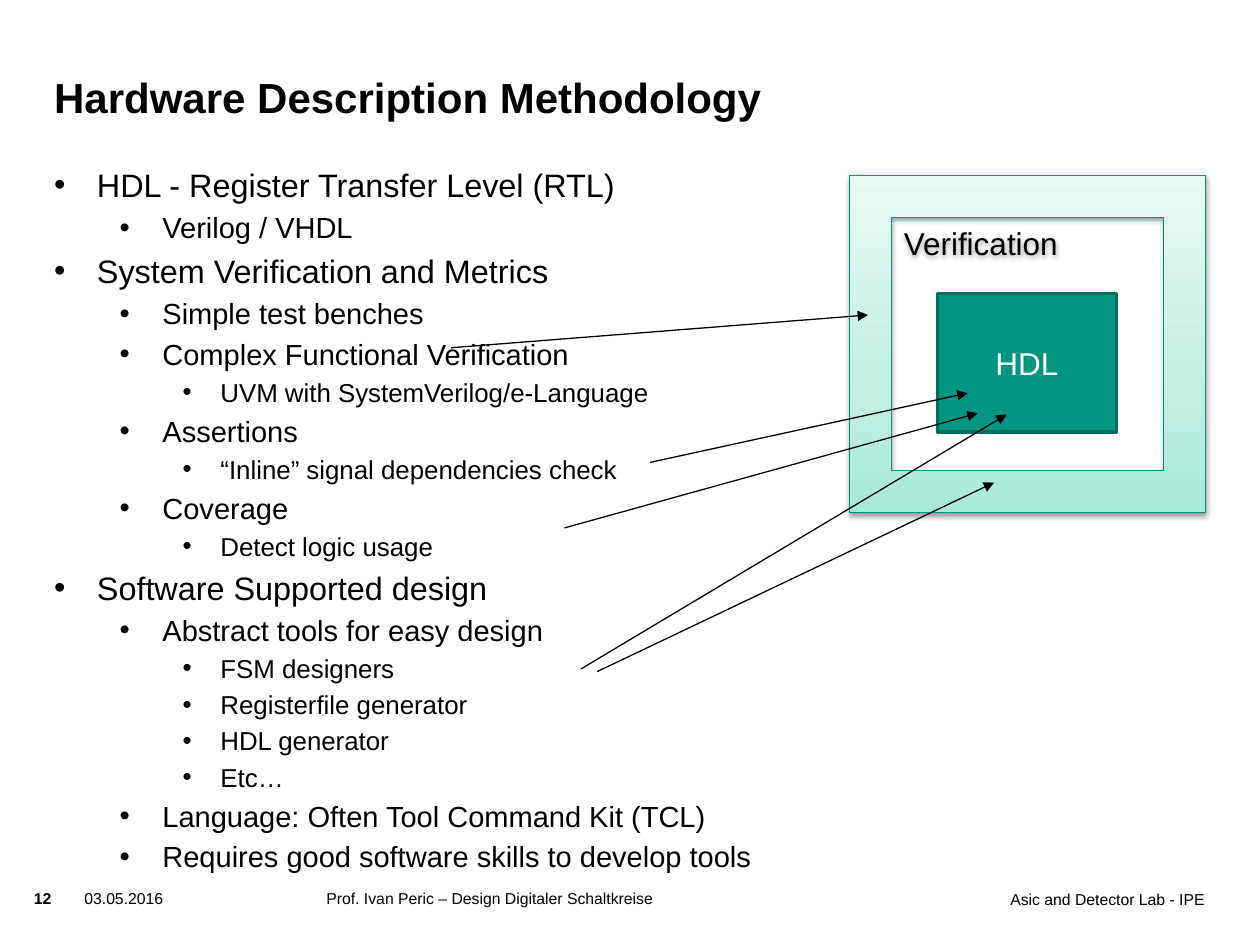
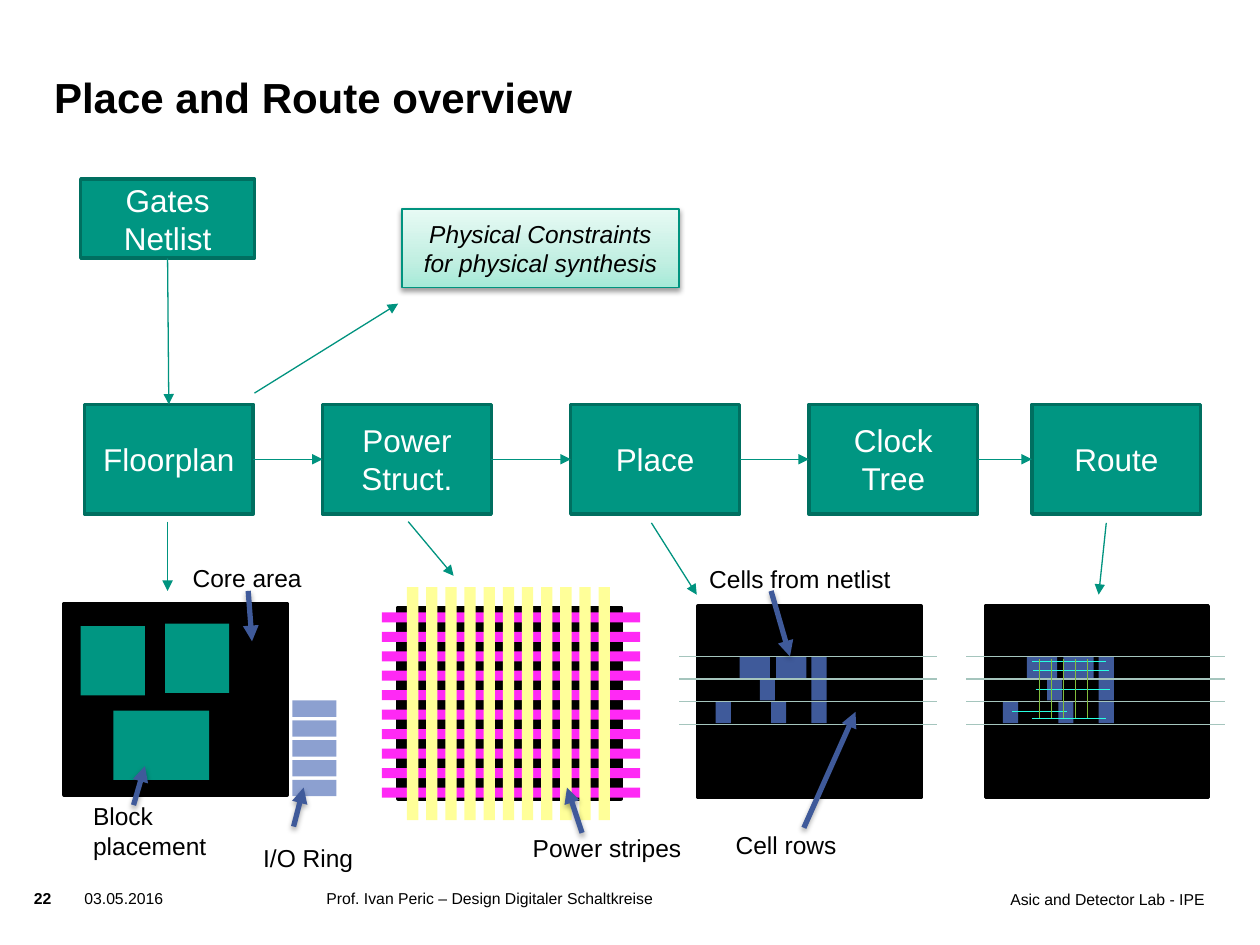
from copy import deepcopy
from dataclasses import dataclass

from pptx import Presentation
from pptx.dml.color import RGBColor
from pptx.enum.shapes import MSO_CONNECTOR, MSO_SHAPE
from pptx.enum.text import MSO_ANCHOR, PP_ALIGN
from pptx.oxml import parse_xml
from pptx.oxml.ns import nsdecls, qn
from pptx.oxml.xmlchemy import OxmlElement
from pptx.util import Inches, Pt


@dataclass(frozen=True)
class Theme:
    font: str = "Arial"
    black: str = "000000"
    white: str = "FFFFFF"
    green: str = "009682"
    green_border: str = "006F60"
    green_line: str = "00937F"
    gradient: tuple = ((0, "A6EAD8"), (0.35, "C2EFE2"), (1, "E7FAF4"))
    blue: str = "3F5A9A"
    pad: str = "8CA0D0"
    power_row: str = "FF29F5"
    power_stripe: str = "FFFF99"
    cell_row: str = "A5C5BD"
    wire_across: str = "27FFE2"
    wire_down: str = "82BE3C"
    title_size: float = 24
    box_size: float = 18
    label_size: float = 14
    footer_size: float = 9
    thin: float = 0.75
    border: float = 2
    pointer: float = 3
    # size, left margin and indent of each bullet level
    bullets: tuple = ((18.5, 0.34, -0.34), (16.6, 0.86, -0.34), (14.8, 1.32, -0.3))


THEME = Theme()


@dataclass(frozen=True)
class Box:
    """A rectangle in inches."""
    left: float
    top: float
    width: float
    height: float

    def inner(self, left, top, width, height):
        return Box(self.left + left, self.top + top, width, height)

    def point(self, across, down):
        return self.left + across, self.top + down

    def lengths(self):
        return [Inches(value) for value in (self.left, self.top, self.width, self.height)]


def rgb(color):
    return RGBColor.from_string(color)


def write(paragraph, text, size, color=THEME.black, bold=False, italic=False):
    run = paragraph.add_run()
    run.text = text
    font = run.font
    font.name, font.size, font.bold, font.italic = THEME.font, Pt(size), bold, italic
    font.color.rgb = rgb(color)


def add_text_box(slide, box, inset=True):
    frame = slide.shapes.add_textbox(*box.lengths()).text_frame
    frame.word_wrap = True
    if not inset:
        frame.margin_left = frame.margin_top = frame.margin_right = frame.margin_bottom = 0
    return frame


def add_rectangle(slide, box, color, border=None):
    shape = slide.shapes.add_shape(MSO_SHAPE.RECTANGLE, *box.lengths())
    shape.shadow.inherit = False
    shape.fill.solid()
    shape.fill.fore_color.rgb = rgb(color)
    if border:
        shape.line.color.rgb = rgb(border)
        shape.line.width = Pt(THEME.border)
    else:
        shape.line.fill.background()
    return shape


def add_green_box(slide, box, text):
    shape = add_rectangle(slide, box, THEME.green, THEME.green_border)
    paragraph = shape.text_frame.paragraphs[0]
    paragraph.alignment = PP_ALIGN.CENTER
    write(paragraph, text, THEME.box_size, THEME.white)
    return shape


def add_drop_shadow(effects, distance, opacity):
    effects.append(parse_xml(
        f'<a:outerShdw {nsdecls("a")} blurRad="{Pt(3.1)}" dist="{Pt(distance)}" '
        f'dir="5400000" rotWithShape="0"><a:srgbClr val="{THEME.black}">'
        f'<a:alpha val="{opacity * 1000}"/></a:srgbClr></a:outerShdw>'))


def add_gradient_shape(slide, kind, box):
    shape = slide.shapes.add_shape(kind, *box.lengths())
    shape.fill.gradient()
    shape.fill.gradient_angle = 90
    properties = shape._element.spPr
    stops = properties.find(".//" + qn("a:gsLst"))
    stops.append(deepcopy(stops[-1]))
    for stop, (position, color) in zip(shape.fill.gradient_stops, THEME.gradient):
        stop.position = position
        stop.color.rgb = rgb(color)
    shape.line.color.rgb = rgb(THEME.green_line)
    shape.line.width = Pt(THEME.thin)
    shape.shadow.inherit = False
    add_drop_shadow(properties.find(qn("a:effectLst")), 1.6, 38)
    return shape


def add_line(slide, start, end, color, width=THEME.thin, arrow=False, shadow=False):
    points = [Inches(value) for value in (*start, *end)]
    connector = slide.shapes.add_connector(MSO_CONNECTOR.STRAIGHT, *points)
    connector.line.color.rgb = rgb(color)
    connector.line.width = Pt(width)
    properties = connector._element.spPr
    if arrow:
        tail = OxmlElement("a:tailEnd")
        tail.set("type", "triangle")
        properties.find(qn("a:ln")).append(tail)
    effects = OxmlElement("a:effectLst")
    properties.append(effects)
    if shadow:
        add_drop_shadow(effects, 1.8, 35)
    return connector


def add_flow_arrow(slide, start, end):
    return add_line(slide, start, end, THEME.green_line, arrow=True)


def join(slide, source, source_side, target, target_side):
    arrow = add_flow_arrow(slide, (0, 0), (1, 1))
    arrow.begin_connect(source, source_side)
    arrow.end_connect(target, target_side)


def add_callout(slide, text, label_box, start, end):
    """A label with a thick pointer to the thing it names."""
    write(add_text_box(slide, label_box).paragraphs[0], text, THEME.label_size)
    add_line(slide, start, end, THEME.blue, THEME.pointer, arrow=True, shadow=True)


def add_base_slide(presentation, title, number):
    """A blank slide with the shared title and footer."""
    slide = presentation.slides.add_slide(presentation.slide_layouts[6])
    left, right = PP_ALIGN.LEFT, PP_ALIGN.RIGHT
    for box, text, alignment, bold in (
        (Box(6.57, 7.06, 2.99, 0.39), "Asic and Detector Lab - IPE", right, False),
        (Box(0.27, 7.05, 0.36, 0.24), number, left, True),
        (Box(0.67, 7.05, 0.94, 0.39), "03.05.2016", left, False),
        (Box(2.59, 7.05, 2.99, 0.39), "Prof. Ivan Peric – Design Digitaler Schaltkreise", left, False),
    ):
        paragraph = add_text_box(slide, box, inset=False).paragraphs[0]
        paragraph.alignment = alignment
        write(paragraph, text, THEME.footer_size, bold=bold)
    frame = add_text_box(slide, Box(0.43, 0.36, 7.56, 0.61), inset=False)
    frame.vertical_anchor = MSO_ANCHOR.BOTTOM
    write(frame.paragraphs[0], title, THEME.title_size, bold=True)
    return slide


def add_bullets(slide, box, items):
    frame = add_text_box(slide, box, inset=False)
    for index, (level, text) in enumerate(items):
        paragraph = frame.add_paragraph() if index else frame.paragraphs[0]
        size, margin, indent = THEME.bullets[level]
        paragraph.level = level
        if index:
            paragraph.space_before = Pt(size / 5)
        properties = paragraph._p.get_or_add_pPr()
        properties.set("marL", str(Inches(margin)))
        properties.set("indent", str(Inches(indent)))
        for tag, name, value in (("a:buFont", "typeface", THEME.font), ("a:buChar", "char", "•")):
            bullet = OxmlElement(tag)
            bullet.set(name, value)
            properties.append(bullet)
        write(paragraph, text, size)


def add_verification_diagram(slide, box):
    add_green_box(slide, box.inner(0.7, 0.94, 1.42, 1.1), "HDL")
    frame = add_gradient_shape(slide, MSO_SHAPE.FRAME, box).text_frame
    frame.vertical_anchor = MSO_ANCHOR.TOP
    frame.paragraphs[0].alignment = PP_ALIGN.LEFT
    write(frame.paragraphs[0], "Verification", THEME.box_size)
    for start, end in (
        ((-1.58, 2.28), (0.94, 1.73)),
        ((-2.26, 2.8), (1.02, 1.89)),
        ((-3.16, 1.37), (0.15, 1.11)),
        ((-2.13, 3.92), (1.25, 1.9)),
        ((-2, 3.94), (1.15, 2.44)),
    ):
        add_line(slide, box.point(*start), box.point(*end), THEME.black, arrow=True)


def add_design_flow(slide, box):
    netlist = add_green_box(slide, box.inner(0, 0, 1.38, 0.63), "Gates Netlist")
    stages = [
        add_green_box(slide, box.inner(left, 1.79, 1.34, 0.87), text)
        for left, text in ((0.03, "Floorplan"), (1.92, "Power Struct."), (3.89, "Place"),
                           (5.78, "Clock Tree"), (7.55, "Route"))
    ]
    constraints = add_gradient_shape(slide, MSO_SHAPE.RECTANGLE, box.inner(2.55, 0.24, 2.2, 0.62))
    paragraph = constraints.text_frame.paragraphs[0]
    paragraph.alignment = PP_ALIGN.CENTER
    write(paragraph, "Physical Constraints for physical synthesis", THEME.label_size, italic=True)
    join(slide, netlist, 2, stages[0], 0)
    for stage, following in zip(stages, stages[1:]):
        join(slide, stage, 3, following, 1)
    add_flow_arrow(slide, box.point(1.38, 1.7), box.point(2.52, 0.99))


def add_die(slide, box, arrow_start, arrow_end):
    """The black chip area and the arrow that leads to it."""
    add_rectangle(slide, box, THEME.black, THEME.black)
    add_flow_arrow(slide, box.point(*arrow_start), box.point(*arrow_end))


def add_floorplan(slide, box):
    add_die(slide, box, (0.82, -0.65), (0.82, -0.1))
    for left, top, width in ((0.13, 0.18, 0.51), (0.8, 0.16, 0.51), (0.39, 0.85, 0.76)):
        add_rectangle(slide, box.inner(left, top, width, 0.55), THEME.green)
    for index in range(5):
        add_rectangle(slide, box.inner(1.81, 0.77 + index * 0.63 / 4, 0.35, 0.13), THEME.pad)
    for text, label, start, end in (
        ("Block placement", (0.13, 1.52, 1.18, 0.57), (0.55, 1.6), (0.64, 1.29)),
        ("I/O Ring", (1.48, 1.85, 1.18, 0.34), (1.82, 1.77), (1.9, 1.46)),
        ("Core area", (0.92, -0.37, 1.18, 0.34), (1.46, -0.1), (1.49, 0.3)),
    ):
        add_callout(slide, text, box.inner(*label), box.point(*start), box.point(*end))


def add_power_grid(slide, box):
    add_die(slide, box, (0.08, -0.68), (0.44, -0.25))
    for index in range(10):
        row = box.inner(-0.13, 0.04 + index * 1.39 / 9, 2.05, 0.08)
        add_rectangle(slide, row, THEME.power_row)
    for index in range(11):
        stripe = box.inner(0.07 + index * 1.52 / 10, -0.16, 0.09, 1.85)
        add_rectangle(slide, stripe, THEME.power_stripe)
    add_callout(slide, "Power stripes", box.inner(0.97, 1.74, 1.64, 0.34),
                box.point(1.46, 1.79), box.point(1.34, 1.43))


def add_cell_rows(slide, box):
    """Three rows of cells between four row lines."""
    first, pitch = 0.4, 0.18
    rows = (((0.33, 0.24), (0.62, 0.24), (0.9, 0.12)),
            ((0.49, 0.12), (0.9, 0.12)),
            ((0.14, 0.12), (0.58, 0.12), (0.9, 0.12)))
    for index, cells in enumerate(rows):
        for left, width in cells:
            add_rectangle(slide, box.inner(left, first + index * pitch, width, 0.17), THEME.blue)
    for index in range(len(rows) + 1):
        height = first + index * pitch
        add_line(slide, box.point(-0.15, height), box.point(1.9, height), THEME.cell_row)


def add_placement(slide, box):
    add_die(slide, box, (-0.37, -0.66), (-0.01, -0.09))
    add_cell_rows(slide, box)
    add_callout(slide, "Cell rows", box.inner(0.2, 1.73, 1.64, 0.34),
                box.point(0.84, 1.76), box.point(1.25, 0.84))
    add_callout(slide, "Cells from netlist", box.inner(-0.01, -0.38, 1.82, 0.34),
                box.point(0.58, -0.12), box.point(0.73, 0.4))


def add_routing(slide, box):
    add_die(slide, box, (0.96, -0.66), (0.9, -0.09))
    add_cell_rows(slide, box)
    for left, right, height in ((0.21, 0.65, 0.84), (0.37, 0.96, 0.89), (0.37, 0.96, 0.44),
                                (0.38, 0.98, 0.51), (0.4, 0.99, 0.66)):
        add_line(slide, box.point(left, height), box.point(right, height), THEME.wire_across)
    for index in range(5):
        across = 0.43 + index * 0.38 / 4
        add_line(slide, box.point(across, 0.42), box.point(across, 0.89), THEME.wire_down)


def build_methodology_slide(presentation):
    slide = add_base_slide(presentation, "Hardware Description Methodology", "12")
    add_bullets(slide, Box(0.43, 1.31, 9.14, 5.6), (
        (0, "HDL - Register Transfer Level (RTL)"), (1, "Verilog / VHDL"),
        (0, "System Verification and Metrics"), (1, "Simple test benches"),
        (1, "Complex Functional Verification"), (2, "UVM with SystemVerilog/e-Language"),
        (1, "Assertions"), (2, "“Inline” signal dependencies check"),
        (1, "Coverage"), (2, "Detect logic usage"),
        (0, "Software Supported design"), (1, "Abstract tools for easy design"),
        (2, "FSM designers"), (2, "Registerfile generator"),
        (2, "HDL generator"), (2, "Etc…"),
        (1, "Language: Often Tool Command Kit (TCL)"),
        (1, "Requires good software skills to develop tools"),
    ))
    add_verification_diagram(slide, Box(6.74, 1.39, 2.83, 2.68))


def build_place_and_route_slide(presentation):
    slide = add_base_slide(presentation, "Place and Route overview", "22")
    add_design_flow(slide, Box(0.64, 1.42, 8.89, 2.66))
    for add_step, left, top in ((add_floorplan, 0.51, 4.79), (add_power_grid, 3.16, 4.82),
                                (add_placement, 5.54, 4.81), (add_routing, 7.82, 4.81)):
        add_step(slide, Box(left, top, 1.77, 1.52))


def main():
    presentation = Presentation()
    presentation.slide_width, presentation.slide_height = Inches(10), Inches(7.5)
    build_methodology_slide(presentation)
    build_place_and_route_slide(presentation)
    presentation.save("out.pptx")


if __name__ == "__main__":
    main()
